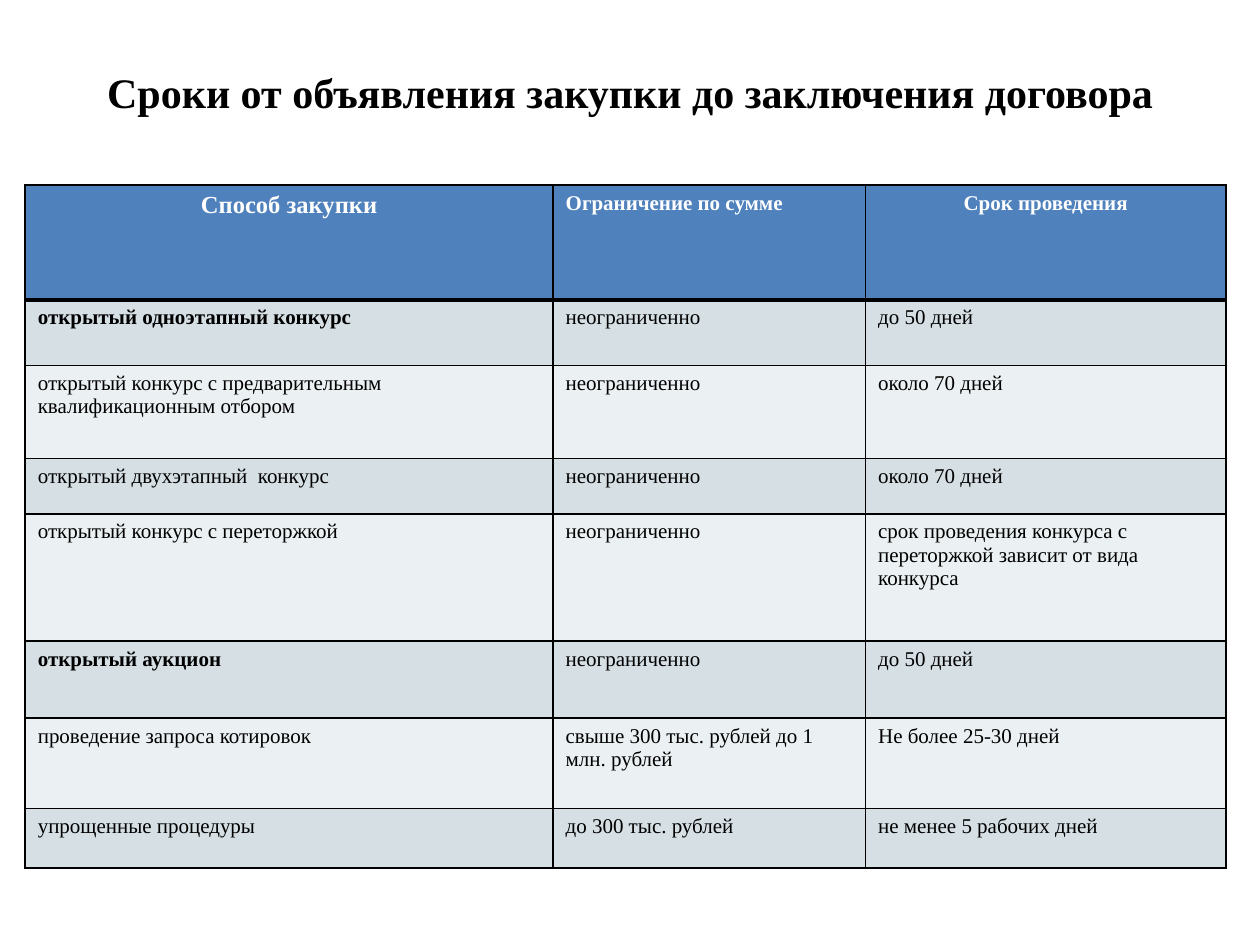
import pptx
import pptx.dml.color
import pptx.enum.text
import pptx.oxml.ns
import pptx.util
from lxml import etree

Inches = pptx.util.Inches
Pt = pptx.util.Pt
RGBColor = pptx.dml.color.RGBColor
PP_ALIGN = pptx.enum.text.PP_ALIGN

BLACK = RGBColor(0x00, 0x00, 0x00)
WHITE = RGBColor(0xFF, 0xFF, 0xFF)
HEADER_BLUE = RGBColor(0x4F, 0x81, 0xBD)
BAND_DARK = RGBColor(0xD5, 0xDF, 0xE4)
BAND_LIGHT = RGBColor(0xEB, 0xF0, 0xF2)
FONT = "Times New Roman"

TITLE = "Сроки от объявления закупки до заключения договора"
COLUMN_WIDTHS = [4.19, 2.48, 2.86]
ROW_HEIGHTS = [0.91, 0.52, 0.74, 0.44, 1.01, 0.61, 0.72, 0.47]
ROWS = [
    ["Способ закупки", "Ограничение по сумме", "Срок проведения"],
    ["открытый одноэтапный конкурс", "неограниченно", "до 50 дней"],
    ["открытый конкурс с предварительным квалификационным отбором",
     "неограниченно", "около 70 дней"],
    ["открытый двухэтапный  конкурс", "неограниченно", "около 70 дней"],
    ["открытый конкурс с переторжкой", "неограниченно",
     "срок проведения конкурса с переторжкой зависит от вида конкурса"],
    ["открытый аукцион", "неограниченно", "до 50 дней"],
    ["проведение запроса котировок",
     "свыше 300 тыс. рублей до 1 млн. рублей", "Не более 25-30 дней"],
    ["упрощенные процедуры", "до 300 тыс. рублей", "не менее 5 рабочих дней"],
]
BOLD_METHODS = {"открытый одноэтапный конкурс", "открытый аукцион"}


def write_text(frame, text, size, color, bold, align):
    frame.text = text
    para = frame.paragraphs[0]
    para.alignment = align
    for span in para.runs:
        span.font.name = FONT
        span.font.size = Pt(size)
        span.font.bold = bold
        span.font.color.rgb = color


def set_borders(cell, widths):
    """Draw solid black borders; widths maps lnL, lnR, lnT, lnB to points."""
    properties = cell._tc.get_or_add_tcPr()
    qn = pptx.oxml.ns.qn
    for side, width in widths.items():
        line = etree.SubElement(properties, qn(f"a:{side}"), w=str(Pt(width)))
        fill = etree.SubElement(line, qn("a:solidFill"))
        etree.SubElement(fill, qn("a:srgbClr"), val=str(BLACK))


def add_title(page):
    box = page.shapes.add_textbox(Inches(0.5), Inches(0.3), Inches(9), Inches(0.85))
    frame = box.text_frame
    frame.word_wrap = True
    frame.vertical_anchor = pptx.enum.text.MSO_ANCHOR.MIDDLE
    write_text(frame, TITLE, 24, BLACK, True, PP_ALIGN.CENTER)


def fill_cell(cell, text, row, column):
    header = row == 0
    set_borders(cell, {"lnL": 1, "lnR": 1,
                       "lnT": 3 if row == 1 else 1,
                       "lnB": 3 if header else 1})
    cell.fill.solid()
    if header:
        cell.fill.fore_color.rgb = HEADER_BLUE
    else:
        cell.fill.fore_color.rgb = BAND_DARK if row % 2 else BAND_LIGHT
    write_text(
        cell.text_frame, text,
        size=14 if header and column == 0 else 12,
        color=WHITE if header else BLACK,
        bold=header or text in BOLD_METHODS,
        align=PP_ALIGN.CENTER if header and column != 1 else PP_ALIGN.LEFT,
    )


def add_terms_table(page):
    table = page.shapes.add_table(
        len(ROWS), len(COLUMN_WIDTHS), Inches(0.2), Inches(1.47),
        Inches(sum(COLUMN_WIDTHS)), Inches(sum(ROW_HEIGHTS))).table
    for column, width in zip(table.columns, COLUMN_WIDTHS):
        column.width = Inches(width)
    for row, height in zip(table.rows, ROW_HEIGHTS):
        row.height = Inches(height)
    for row, texts in enumerate(ROWS):
        for column, text in enumerate(texts):
            fill_cell(table.cell(row, column), text, row, column)


def main():
    deck = pptx.Presentation()
    deck.slide_width = Inches(10)
    deck.slide_height = Inches(7.5)
    page = deck.slides.add_slide(deck.slide_layouts[6])
    add_title(page)
    add_terms_table(page)
    deck.save("out.pptx")


if __name__ == "__main__":
    main()
